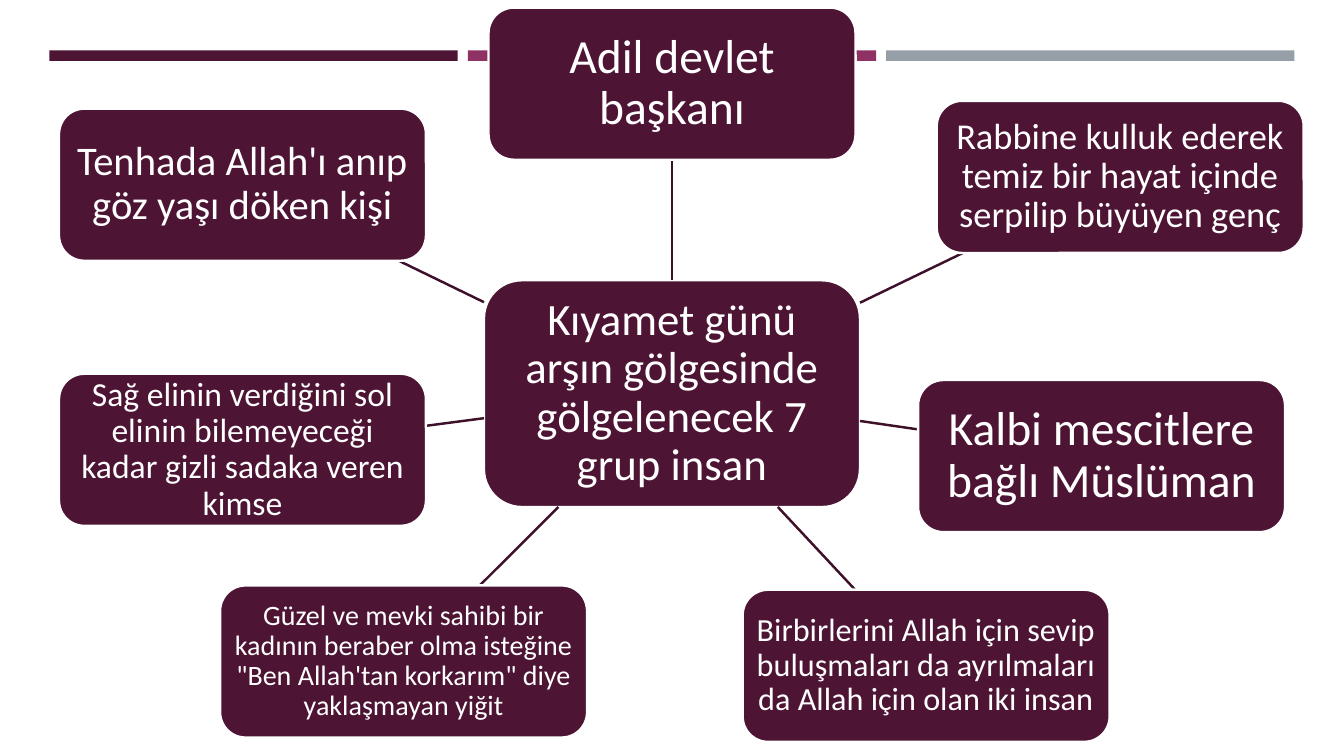
import pptx
import pptx.util
import pptx.dml.color
import pptx.enum.shapes
import pptx.enum.text
import lxml.etree
from dataclasses import dataclass
from pptx.oxml.ns import qn


@dataclass(frozen=True)
class Theme:
    font: str = "Calibri"
    plum: str = "4D1434"
    grey: str = "969FA7"
    magenta: str = "903163"
    spoke: str = "3E102A"
    white: str = "FFFFFF"
    line: float = 1.75
    hub: int = 32
    huge: int = 34
    large: int = 29
    medium: int = 26
    normal: int = 24
    small: int = 23
    tiny: int = 20


@dataclass(frozen=True)
class Size:
    w: float
    h: float


@dataclass(frozen=True)
class Node:
    text: str
    x: float
    y: float
    size: Size
    pt: int


THEME = Theme()
SLIDE_W = pptx.util.Inches(13.33)
SLIDE_H = pptx.util.Inches(7.5)
HUB_SIZE = Size(27.98, 30)
BOX_SIZE = Size(27.31, 20.13)
PAD_PER_PT = 0.2

HUB = Node("Kıyamet günü arşın gölgesinde gölgelenecek 7 grup insan",
           50, 52.07, HUB_SIZE, THEME.hub)
GROUPS = [
    Node("Adil devlet başkanı", 50, 11.07, BOX_SIZE, THEME.huge),
    Node("Rabbine kulluk ederek temiz bir hayat içinde serpilip büyüyen genç",
         83.35, 23.4, BOX_SIZE, THEME.medium),
    Node("Kalbi mescitlere bağlı Müslüman", 81.96, 60.33, BOX_SIZE, THEME.huge),
    Node("Birbirlerini Allah için sevip buluşmaları da ayrılmaları da Allah için olan iki insan",
         68.91, 88.07, BOX_SIZE, THEME.small),
    Node("Güzel ve mevki sahibi bir kadının beraber olma isteğine "
         "\"Ben Allah'tan korkarım\" diye yaklaşmayan yiğit",
         30.03, 87.5, BOX_SIZE, THEME.tiny),
    Node("Sağ elinin verdiğini sol elinin bilemeyeceği kadar gizli sadaka veren kimse",
         18.04, 59.5, BOX_SIZE, THEME.normal),
    Node("Tenhada Allah'ı anıp göz yaşı döken kişi", 18.04, 24.43, BOX_SIZE, THEME.large),
]
BAR_LEFT, BAR_TOP, BAR_STEP = 3.68, 6.67, 31.13
BAR_SIZE = Size(30.38, 1.4)


def across(share: float) -> int:
    return round(SLIDE_W * share / 100)


def down(share: float) -> int:
    return round(SLIDE_H * share / 100)


def rgb(value: str) -> pptx.dml.color.RGBColor:
    return pptx.dml.color.RGBColor.from_string(value)


def add_block(s, kind, x: float, y: float, size: Size, color: str):
    sp = s.shapes.add_shape(kind, across(x), down(y), across(size.w), down(size.h))
    sp.shadow.inherit = False
    sp.fill.solid()
    sp.fill.fore_color.rgb = rgb(color)
    sp.line.fill.background()
    return sp


def add_bars(s) -> None:
    for i, color in enumerate((THEME.plum, THEME.magenta, THEME.grey)):
        add_block(s, pptx.enum.shapes.MSO_SHAPE.RECTANGLE,
                  BAR_LEFT + i * BAR_STEP, BAR_TOP, BAR_SIZE, color)


def add_node(s, node: Node) -> None:
    sp = add_block(s, pptx.enum.shapes.MSO_SHAPE.ROUNDED_RECTANGLE,
                   node.x - node.size.w / 2, node.y - node.size.h / 2,
                   node.size, THEME.plum)
    sp.line.color.rgb = rgb(THEME.white)
    sp.line.width = pptx.util.Pt(THEME.line)
    tf = sp.text_frame
    tf.word_wrap = True
    tf.vertical_anchor = pptx.enum.text.MSO_ANCHOR.MIDDLE
    pad = pptx.util.Pt(node.pt * PAD_PER_PT)
    tf.margin_left = tf.margin_right = tf.margin_top = tf.margin_bottom = pad
    p = tf.paragraphs[0]
    p.alignment = pptx.enum.text.PP_ALIGN.CENTER
    p.line_spacing = 0.9
    r = p.add_run()
    r.text = node.text
    r.font.name = THEME.font
    r.font.size = pptx.util.Pt(node.pt)
    r.font.color.rgb = rgb(THEME.white)


def edge_towards(node: Node, other: Node) -> tuple[int, int]:
    dx, dy = other.x - node.x, other.y - node.y
    reach = min(size / 2 / abs(d)
                for size, d in ((node.size.w, dx), (node.size.h, dy)) if d)
    return across(node.x + dx * reach), down(node.y + dy * reach)


def add_spoke(s, hub: Node, node: Node) -> None:
    cx = s.shapes.add_connector(pptx.enum.shapes.MSO_CONNECTOR.STRAIGHT,
                                *edge_towards(hub, node), *edge_towards(node, hub))
    cx.line.color.rgb = rgb(THEME.spoke)
    cx.line.width = pptx.util.Pt(THEME.line)
    lxml.etree.SubElement(cx._element.spPr, qn("a:effectLst"))


def main() -> None:
    prs = pptx.Presentation()
    prs.slide_width, prs.slide_height = SLIDE_W, SLIDE_H
    s = prs.slides.add_slide(prs.slide_layouts[6])
    add_bars(s)
    add_node(s, HUB)
    for node in GROUPS:
        add_spoke(s, HUB, node)
        add_node(s, node)
    prs.save("out.pptx")


if __name__ == "__main__":
    main()
